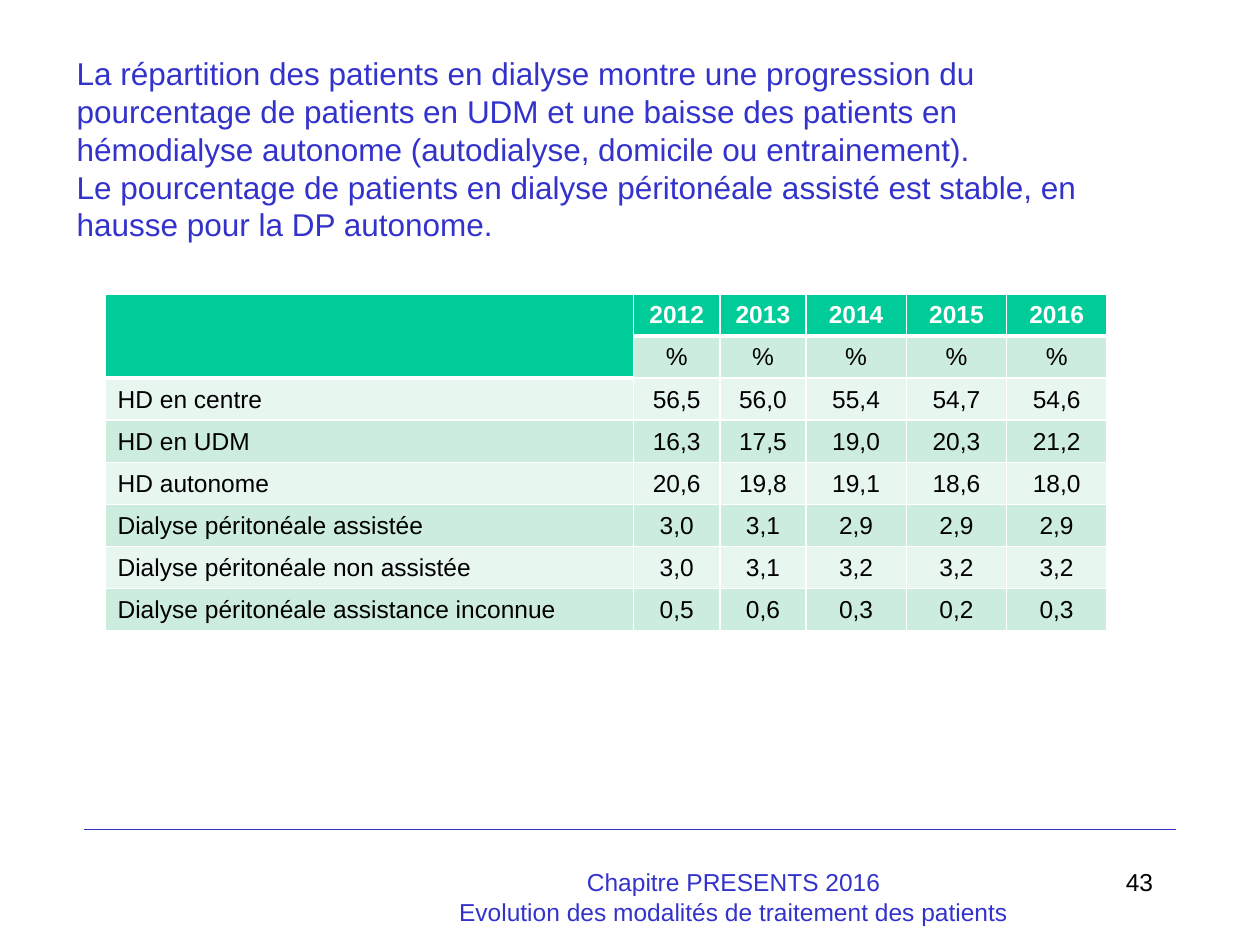
from pptx import Presentation
from pptx.dml.color import RGBColor
from pptx.enum.shapes import MSO_CONNECTOR
from pptx.enum.text import MSO_ANCHOR as Anchor, PP_ALIGN as Align
from pptx.oxml.ns import qn
from pptx.util import Pt
from lxml.etree import SubElement as Sub

BLUE = RGBColor(0x33, 0x33, 0xCC)
BLACK = RGBColor(0, 0, 0)
WHITE = RGBColor(0xFF, 0xFF, 0xFF)
GREEN = RGBColor(0x00, 0xCC, 0x99)
MINT = RGBColor(0xCC, 0xEC, 0xDE)
PALE = RGBColor(0xE7, 0xF6, 0xEF)


def add_text(box, lines, size, color, align, anchor=Anchor.TOP):
    frame = slide.shapes.add_textbox(*map(Pt, box)).text_frame
    frame.word_wrap = True
    frame.vertical_anchor = anchor
    frame.text = "\n".join(lines)
    for para in frame.paragraphs:
        para.alignment = align
        para.font.name = "Arial"
        para.font.size = Pt(size)
        para.font.color.rgb = color


def add_edges(cell, base):
    """Draw white cell borders, 1 pt wide but for the given base width."""
    props = cell._tc.get_or_add_tcPr()
    for at, (side, width) in enumerate(
            [("lnL", 1), ("lnR", 1), ("lnT", 1), ("lnB", base)]):
        line = Sub(props, qn("a:" + side), w=str(Pt(width)))
        fill = Sub(line, qn("a:solidFill"))
        Sub(fill, qn("a:srgbClr"), val=str(WHITE))
        props.insert(at, line)


deck = Presentation()
deck.slide_width, deck.slide_height = Pt(720), Pt(540)
slide = deck.slides.add_slide(deck.slide_layouts[6])

rule = slide.shapes.add_connector(
    MSO_CONNECTOR.STRAIGHT, Pt(48), Pt(474), Pt(672), Pt(474))
rule.line.color.rgb = BLUE
rule.line.width = Pt(1)
Sub(rule._element.spPr, qn("a:effectLst"))

add_text((516, 492, 150, 36), ["43"], 14, BLACK, Align.RIGHT)
add_text((36.75, 26.75, 623.5, 116.5), [
    "La répartition des patients en dialyse montre une progression du "
    "pourcentage de patients en UDM et une baisse des patients en "
    "hémodialyse autonome (autodialyse, domicile ou entrainement).",
    "Le pourcentage de patients en dialyse péritonéale assisté est stable, "
    "en hausse pour la DP autonome.",
], 18, BLUE, Align.LEFT, Anchor.MIDDLE)
add_text((246, 492, 346.5, 36), [
    "Chapitre PRESENTS 2016",
    "Evolution des modalités de traitement des patients",
], 14, BLUE, Align.CENTER)

ROWS = [
    ["", "2012", "2013", "2014", "2015", "2016"],
    ["", "%", "%", "%", "%", "%"],
    ["HD en centre", "56,5", "56,0", "55,4", "54,7", "54,6"],
    ["HD en UDM", "16,3", "17,5", "19,0", "20,3", "21,2"],
    ["HD autonome", "20,6", "19,8", "19,1", "18,6", "18,0"],
    ["Dialyse péritonéale assistée", "3,0", "3,1", "2,9", "2,9", "2,9"],
    ["Dialyse péritonéale non assistée", "3,0", "3,1", "3,2", "3,2", "3,2"],
    ["Dialyse péritonéale assistance inconnue",
     "0,5", "0,6", "0,3", "0,2", "0,3"],
]
WIDTHS = [302, 49.5, 49, 57.5, 57.25, 57.25]

table = slide.shapes.add_table(
    len(ROWS), len(WIDTHS), Pt(60), Pt(168), Pt(sum(WIDTHS)), Pt(192)).table
for col, width in zip(table.columns, WIDTHS):
    col.width = Pt(width)
table.cell(0, 0).merge(table.cell(1, 0))

for r, row in enumerate(ROWS):
    table.rows[r].height = Pt(24)
    for c, text in enumerate(row):
        cell = table.cell(r, c)
        head = r == 0 or (r == 1 and c == 0)
        cell.text = text
        cell.vertical_anchor = Anchor.MIDDLE if r < 2 else Anchor.BOTTOM
        cell.fill.solid()
        cell.fill.fore_color.rgb = GREEN if head else MINT if r % 2 else PALE
        add_edges(cell, 3 if head else 1)
        para = cell.text_frame.paragraphs[0]
        para.alignment = Align.CENTER if c else Align.LEFT
        para.font.name = "Arial"
        para.font.size = Pt(14)
        para.font.bold = head
        para.font.color.rgb = WHITE if head else BLACK

deck.save("out.pptx")
